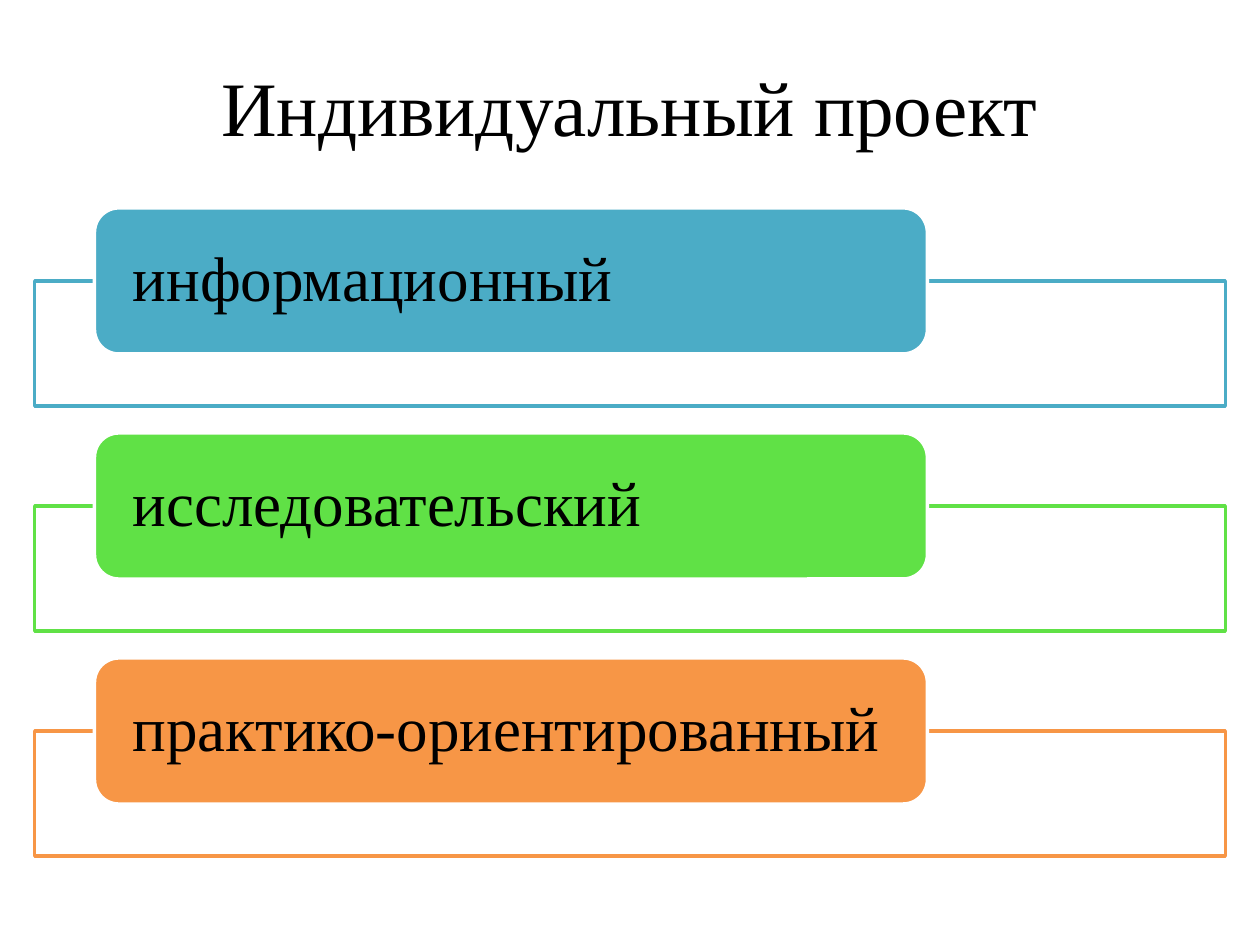
"""Build a slide listing the three types of individual project."""
import pptx
import pptx.dml.color
import pptx.enum.shapes
import pptx.enum.text
import pptx.util

Pt = pptx.util.Pt
RGBColor = pptx.dml.color.RGBColor
Shape = pptx.enum.shapes.MSO_SHAPE
Align = pptx.enum.text.PP_ALIGN
Anchor = pptx.enum.text.MSO_ANCHOR

BLACK = RGBColor(0x00, 0x00, 0x00)
WHITE = RGBColor(0xFF, 0xFF, 0xFF)
BLUE = RGBColor(0x4B, 0xAC, 0xC6)
GREEN = RGBColor(0x60, 0xE1, 0x46)
ORANGE = RGBColor(0xF7, 0x96, 0x46)

PROJECT_TYPES = [
    ("информационный", BLUE),
    ("исследовательский", GREEN),
    ("практико-ориентированный", ORANGE),
]
FIRST_TOP = 118.8
ROW_STEP = 128.6
FRAME_DROP = 41.8


def write(frame, text, *, font, size, color, align=Align.LEFT, inset=(7.2, 3.6), spacing=1.0):
    """Put one formatted paragraph into a text frame."""
    frame.word_wrap = True
    frame.vertical_anchor = Anchor.MIDDLE
    frame.margin_left = frame.margin_right = Pt(inset[0])
    frame.margin_top = frame.margin_bottom = Pt(inset[1])
    para = frame.paragraphs[0]
    para.alignment = align
    para.line_spacing = spacing
    span = para.add_run()
    span.text = text
    span.font.name = font
    span.font.size = Pt(size)
    span.font.color.rgb = color


class SlideBuilder:
    """Hold the style and the current slide."""

    font = "Times New Roman"
    line_width = 2

    def __init__(self, page):
        self.page = page

    def title(self, text, left, top, width, height):
        """Add the centred heading."""
        box = self.page.shapes.add_textbox(Pt(left), Pt(top), Pt(width), Pt(height))
        write(box.text_frame, text, font=self.font, size=44, color=BLACK, align=Align.CENTER)

    def panel(self, kind, left, top, width, height, *, fill, line):
        """Add a filled and outlined shape."""
        shape = self.page.shapes.add_shape(kind, Pt(left), Pt(top), Pt(width), Pt(height))
        shape.shadow.inherit = False
        shape.fill.solid()
        shape.fill.fore_color.rgb = fill
        shape.line.color.rgb = line
        shape.line.width = Pt(self.line_width)
        return shape

    def project_type(self, text, top, color):
        """Add a wide frame with a rounded label over its upper edge."""
        self.panel(Shape.RECTANGLE, 19.8, top + FRAME_DROP, 680.4, 71.4, fill=WHITE, line=color)
        label = self.panel(Shape.ROUNDED_RECTANGLE, 54, top, 476, 83.5, fill=color, line=WHITE)
        write(label.text_frame, text, font=self.font, size=36, color=BLACK,
              inset=(17.8, 0), spacing=0.9)


def main():
    """Build and save the deck."""
    deck = pptx.Presentation()
    deck.slide_width, deck.slide_height = Pt(720), Pt(540)
    builder = SlideBuilder(deck.slides.add_slide(deck.slide_layouts[6]))
    builder.title("Индивидуальный проект", 54, 21, 612, 79)
    for row, (text, color) in enumerate(PROJECT_TYPES):
        builder.project_type(text, FIRST_TOP + row * ROW_STEP, color)
    deck.save("out.pptx")


if __name__ == "__main__":
    main()
